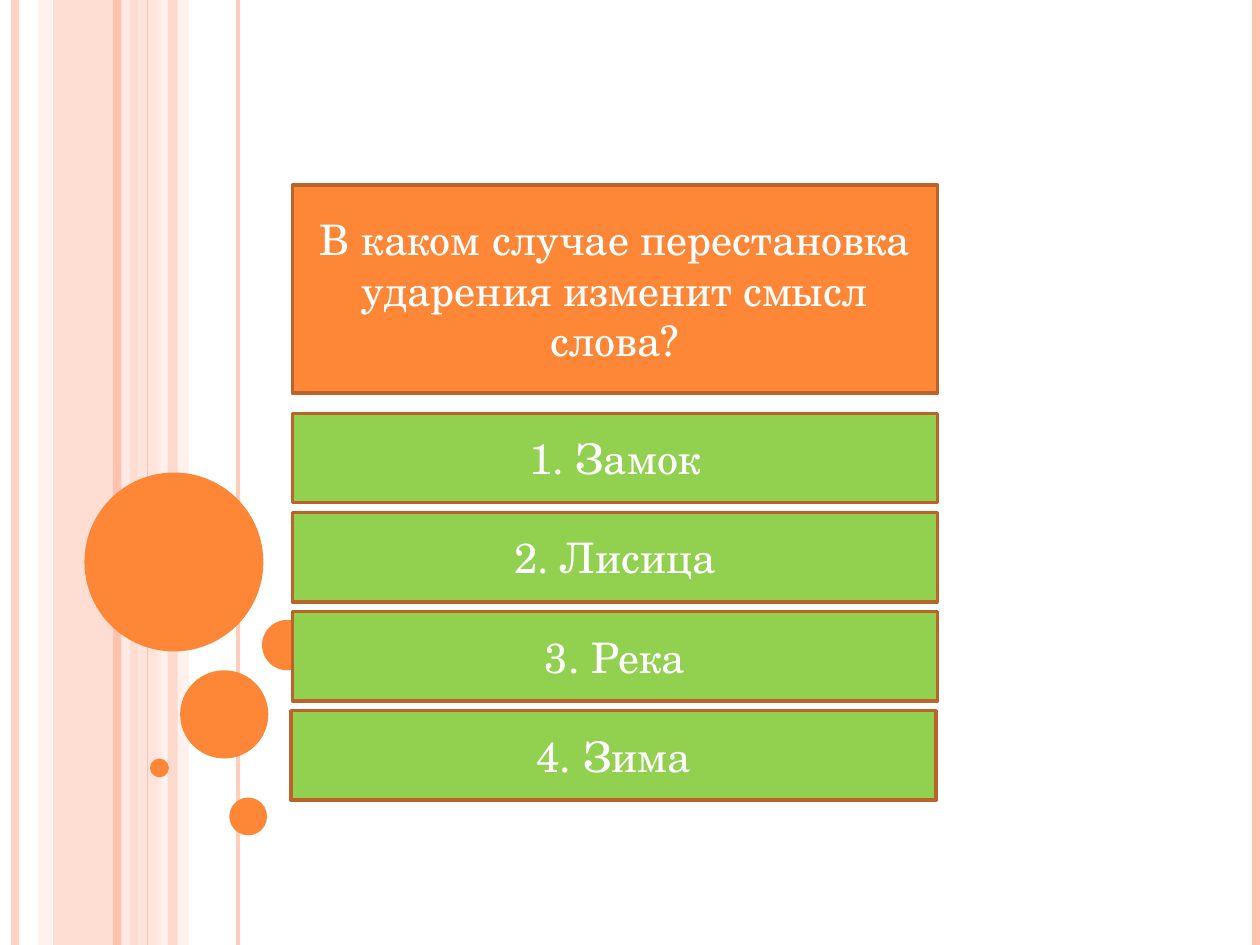
from lxml import etree
from pptx import Presentation
from pptx.dml.color import RGBColor
from pptx.enum.shapes import MSO_CONNECTOR, MSO_SHAPE
from pptx.enum.text import MSO_ANCHOR, PP_ALIGN
from pptx.oxml.ns import qn
from pptx.util import Inches, Pt

RECT, OVAL = MSO_SHAPE.RECTANGLE, MSO_SHAPE.OVAL
STRAIGHT = MSO_CONNECTOR.STRAIGHT
MIDDLE, CENTER = MSO_ANCHOR.MIDDLE, PP_ALIGN.CENTER

ORANGE = RGBColor(0xFE, 0x86, 0x37)
RUST = RGBColor(0xBC, 0x63, 0x29)
GREEN = RGBColor(0x92, 0xD0, 0x50)
PEACH = RGBColor(0xFE, 0xC3, 0xAE)
BLUSH = RGBColor(0xFF, 0xD9, 0xCE)
PALE = RGBColor(0xFF, 0xED, 0xE8)
WHITE = RGBColor(0xFF, 0xFF, 0xFF)

WIDTH, HEIGHT = 10, 7.5


def fade(fill, opacity):
    """Set the opacity, in percent, of the solid fill inside an element."""
    color = fill.find(qn("a:solidFill"))[0]
    etree.SubElement(color, qn("a:alpha"), val=str(opacity * 1000))


def write(shape, text, size=24, color=WHITE, font="TeX Gyre Schola"):
    frame = shape.text_frame
    frame.word_wrap = True
    frame.vertical_anchor = MIDDLE
    para = frame.paragraphs[0]
    para.alignment = CENTER
    run = para.add_run()
    run.text = text
    run.font.size = Pt(size)
    run.font.name = font
    run.font.color.rgb = color


class Board:
    def __init__(self, slide):
        self.slide = slide
        self.edge, self.weight = RUST, 2

    def shape(self, kind, left, top, width, height, color):
        item = self.slide.shapes.add_shape(
            kind, Inches(left), Inches(top), Inches(width), Inches(height))
        item.shadow.inherit = False
        item.fill.solid()
        item.fill.fore_color.rgb = color
        item.line.fill.background()
        return item

    def band(self, left, width, color, opacity):
        item = self.shape(RECT, left, 0, width, HEIGHT, color)
        fade(item.element.spPr, opacity)

    def stripe(self, x, weight, color, opacity=100):
        item = self.slide.shapes.add_connector(
            STRAIGHT, Inches(x), 0, Inches(x), Inches(HEIGHT))
        item.line.width = Pt(weight)
        item.line.color.rgb = color
        props = item.element.spPr
        if opacity < 100:
            fade(props.find(qn("a:ln")), opacity)
        etree.SubElement(props, qn("a:effectLst"))

    def dot(self, left, top, size):
        self.shape(OVAL, left, top, size, size, ORANGE)

    def box(self, text, left, top, height, color):
        item = self.shape(RECT, left, top, 5.12, height, color)
        item.line.color.rgb = self.edge
        item.line.width = Pt(self.weight)
        write(item, text)


def main():
    deck = Presentation()
    deck.slide_width, deck.slide_height = Inches(WIDTH), Inches(HEIGHT)
    board = Board(deck.slides.add_slide(deck.slide_layouts[6]))

    for band in ((0.42, 0.67, PEACH, 54), (0.3, 0.11, BLUSH, 36),
                 (1.08, 0.2, BLUSH, 70), (1.25, 0.25, PALE, 71)):
        board.band(*band)
    for stripe in ((0.12, 4.5, PEACH, 73), (1, 4.5, PALE, 83),
                   (0.93, 4.5, PEACH), (1.89, 2.25, PEACH, 82),
                   (1.17, 0.75, PEACH), (9.97, 4.5, PEACH)):
        board.stripe(*stripe)
    board.band(1.33, 0.08, PEACH, 51)

    for dot in ((0.67, 3.75, 1.42), (1.43, 5.32, 0.7), (1.19, 6.02, 0.15),
                (1.82, 6.33, 0.3), (2.08, 4.92, 0.4)):
        board.dot(*dot)

    board.box("В каком случае перестановка ударения изменит смысл слова?",
              2.32, 1.47, 1.65, ORANGE)
    first, last = 3.28, 5.64
    words = (("Замок", 2.32), ("Лисица", 2.32), ("Река", 2.32), ("Зима", 2.31))
    step = (last - first) / (len(words) - 1)
    for i, (word, left) in enumerate(words):
        board.box(f"{i + 1}. {word}", left, first + i * step, 0.71, GREEN)

    deck.save("out.pptx")


if __name__ == "__main__":
    main()
